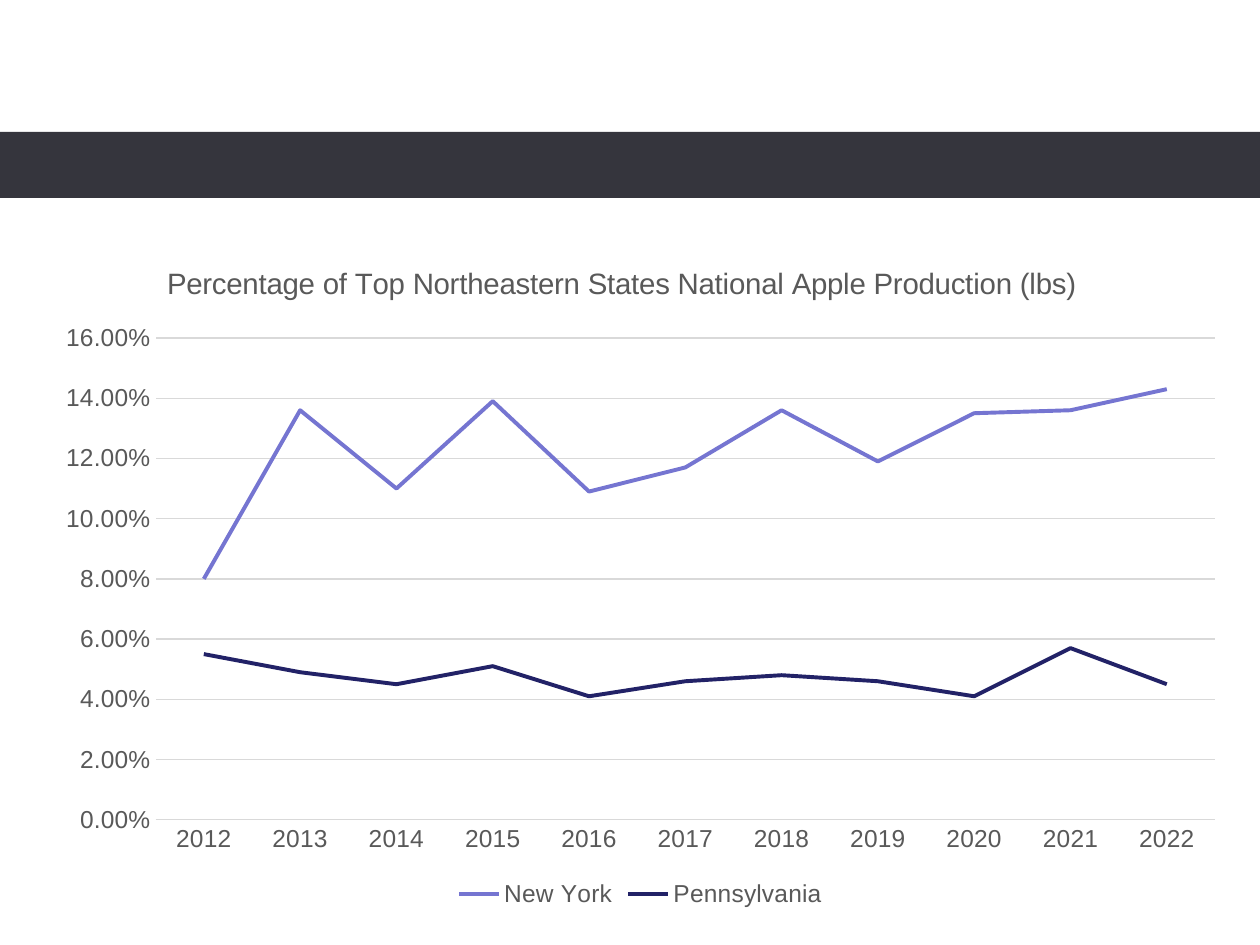
from lxml import etree
from pptx import Presentation
from pptx.chart.data import CategoryChartData
from pptx.dml.color import RGBColor as RGB
from pptx.enum.chart import XL_CHART_TYPE as CT, XL_LEGEND_POSITION as LP
from pptx.enum.chart import XL_MARKER_STYLE as MS, XL_TICK_MARK as TM
from pptx.enum.shapes import MSO_SHAPE as SHAPE
from pptx.oxml.ns import qn
from pptx.util import Pt

PX = 914400 / 126
COLORS = {"bg": "FFFFFF", "band": "35353D", "text": "595959", "grid": "D9D9D9",
          "New York": "7575D1", "Pennsylvania": "222267"}
YEARS = [str(y) for y in range(2012, 2023)]
SHARES = {
    "New York": (0.08, 0.136, 0.11, 0.139, 0.109, 0.117, 0.136, 0.119, 0.135, 0.136, 0.143),
    "Pennsylvania": (0.055, 0.049, 0.045, 0.051, 0.041, 0.046, 0.048, 0.046, 0.041, 0.057, 0.045),
}
TITLE = "Percentage of Top Northeastern States National Apple Production (lbs)"


def emu(*lengths):
    return [round(n * PX) for n in lengths]


class Deck:
    font_name = "Arial"

    def __init__(self, width, height):
        self.prs = Presentation()
        self.prs.slide_width, self.prs.slide_height = emu(width, height)
        self.s = self.prs.slides.add_slide(self.prs.slide_layouts[6])
        self.paint(self.s.background.fill, "bg")

    def paint(self, fill, color):
        fill.solid()
        fill.fore_color.rgb = RGB.from_string(COLORS[color])

    def stroke(self, line, color, width):
        self.paint(line.fill, color)
        line.width = Pt(width)

    def style(self, font, size):
        for key, value in {"name": self.font_name, "size": Pt(size), "bold": False}.items():
            setattr(font, key, value)
        font.color.rgb = RGB.from_string(COLORS["text"])

    def band(self, *box):
        sp = self.s.shapes.add_shape(SHAPE.RECTANGLE, *emu(*box))
        sp.shadow.inherit = False
        self.paint(sp.fill, "band")
        sp.line.fill.background()

    def layout(self, parent, index, **values):
        """Fix the place of a chart part, in fractions of the chart."""
        for old in parent.findall(qn("c:layout")):
            parent.remove(old)
        layout = etree.Element(qn("c:layout"))
        manual = etree.SubElement(layout, qn("c:manualLayout"))
        for tag, value in values.items():
            etree.SubElement(manual, qn(f"c:{tag}")).set("val", str(value))
        parent.insert(index, layout)

    def line_chart(self, box, title, cats, series):
        data = CategoryChartData(number_format="0.00%")
        data.categories = cats
        for name, values in series.items():
            data.add_series(name, values)
        chart = self.s.shapes.add_chart(CT.LINE, *emu(*box), data).chart
        self.style(chart.font, 14)

        # Title
        tf = chart.chart_title.text_frame
        tf.text = title
        self.style(tf.paragraphs[0].runs[0].font, 16.8)
        edge = {"xMode": "edge", "yMode": "edge"}
        self.layout(chart.chart_title._element, 1, **edge, x=0.1, y=0.03)
        self.layout(chart._chartSpace.chart.plotArea, 0, layoutTarget="inner", **edge,
                    x=0.095, y=0.147, w=0.885, h=0.715)

        # Axes
        cat, val = chart.category_axis, chart.value_axis
        for axis in (cat, val):
            axis.major_tick_mark = axis.minor_tick_mark = TM.NONE
            self.style(axis.tick_labels.font, 14)
        self.stroke(cat.format.line, "grid", 0.75)
        val.format.line.fill.background()
        self.stroke(val.major_gridlines.format.line, "grid", 0.75)
        for key, value in {"minimum_scale": 0, "maximum_scale": 0.16, "major_unit": 0.02}.items():
            setattr(val, key, value)
        labels = val.tick_labels
        labels.number_format, labels.number_format_is_linked = "0.00%", False

        # Legend
        chart.has_legend = True
        chart.legend.position, chart.legend.include_in_layout = LP.BOTTOM, False
        self.style(chart.legend.font, 14)

        # Lines
        plot = chart.plots[0]
        plot.vary_by_categories = False
        for ser in plot.series:
            ser.smooth = False
            ser.marker.style = MS.NONE
            self.stroke(ser.format.line, ser.name, 2.25)


def main():
    deck = Deck(1260, 945)
    deck.band(0, 132, 1261, 66)
    deck.line_chart((42, 239, 1197, 674), TITLE, YEARS, SHARES)
    deck.prs.save("out.pptx")


if __name__ == "__main__":
    main()
